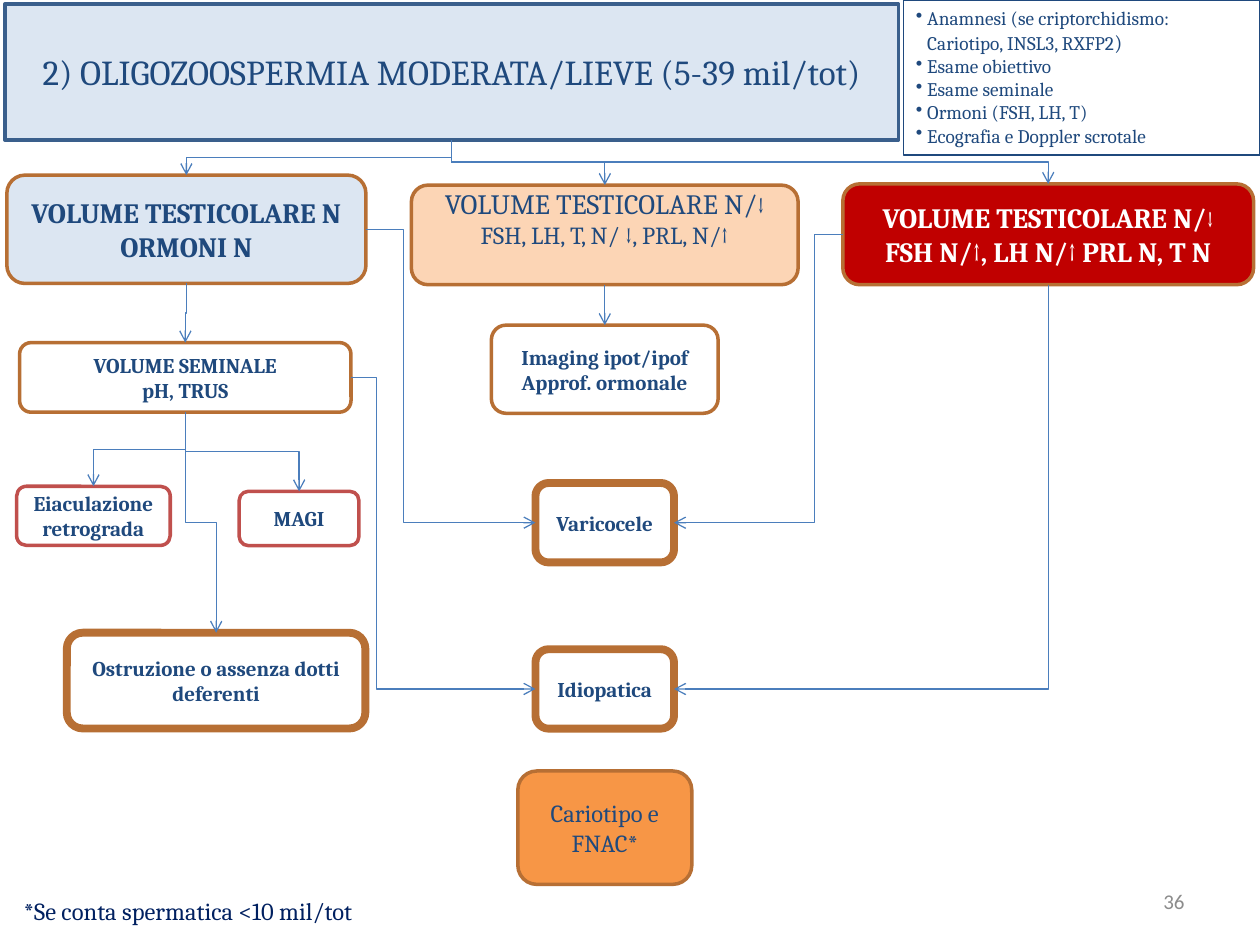
from lxml.etree import SubElement
from pptx import Presentation
from pptx.dml.color import RGBColor
from pptx.enum.shapes import MSO_CONNECTOR, MSO_SHAPE
from pptx.enum.text import MSO_ANCHOR, MSO_AUTO_SIZE, PP_ALIGN
from pptx.oxml.ns import qn
from pptx.util import Pt

NAVY = RGBColor(0x1F, 0x49, 0x7D)
NOTE_NAVY = RGBColor(0x00, 0x20, 0x60)
TITLE_EDGE = RGBColor(0x3A, 0x5F, 0x8C)
ARROW_BLUE = RGBColor(0x4B, 0x7E, 0xBC)
PALE_BLUE = RGBColor(0xDC, 0xE6, 0xF2)
PEACH = RGBColor(0xFC, 0xD5, 0xB5)
ORANGE = RGBColor(0xF7, 0x96, 0x46)
BROWN = RGBColor(0xB7, 0x6F, 0x34)
RED_EDGE = RGBColor(0xC0, 0x50, 0x4D)
DARK_RED = RGBColor(0xC0, 0x00, 0x00)
WHITE = RGBColor(0xFF, 0xFF, 0xFF)
GREY = RGBColor(0x8C, 0x8C, 0x8C)

MIDDLE_X, RIGHT_X = 345.6, 599
TOP, LEFT, BOTTOM, RIGHT = range(4)


def write(frame, paragraphs, size, color=NAVY, bold=False,
          align=PP_ALIGN.CENTER, font="Cambria", bullet=False):
    """Fill a frame; a paragraph is a string or a list of (text, size) runs."""
    frame.word_wrap = True
    frame.auto_size = MSO_AUTO_SIZE.NONE
    for index, content in enumerate(paragraphs):
        paragraph = frame.paragraphs[0] if index == 0 else frame.add_paragraph()
        runs = [(content, None)] if isinstance(content, str) else content
        for text, run_size in runs:
            run = paragraph.add_run()
            run.text = text
            if run_size:
                run.font.size = Pt(run_size)
        paragraph.alignment = align
        if bullet:
            properties = paragraph._p.get_or_add_pPr()
            properties.set("marL", str(Pt(6.5)))
            properties.set("indent", str(-Pt(6.5)))
            SubElement(properties, qn("a:buChar"), char="•")
        paragraph.font.name = font
        paragraph.font.size = Pt(size)
        paragraph.font.bold = bold
        paragraph.font.color.rgb = color


def paint(shape, fill, edge, weight):
    if fill is None:
        shape.fill.background()
    else:
        shape.fill.solid()
        shape.fill.fore_color.rgb = fill
    shape.line.color.rgb = edge
    shape.line.width = Pt(weight)


def add_title(slide, text):
    title = slide.shapes.title
    title.left, title.top = Pt(2.9), Pt(2.2)
    title.width, title.height = Pt(510.5), Pt(77.8)
    geometry = SubElement(title._element.spPr, qn("a:prstGeom"), prst="roundRect")
    SubElement(geometry, qn("a:avLst"))
    paint(title, PALE_BLUE, TITLE_EDGE, 2)
    write(title.text_frame, [text], 20)
    title.text_frame.vertical_anchor = MSO_ANCHOR.MIDDLE
    return title


def add_box(slide, center_x, top, width, height, paragraphs, size=12,
            fill=None, edge=BROWN, weight=2, color=NAVY, bold=True):
    box = slide.shapes.add_shape(MSO_SHAPE.ROUNDED_RECTANGLE, Pt(center_x - width / 2),
                                 Pt(top), Pt(width), Pt(height))
    box.shadow.inherit = False
    paint(box, fill, edge, weight)
    write(box.text_frame, paragraphs, size, color, bold)
    box.text_frame.vertical_anchor = MSO_ANCHOR.MIDDLE
    return box


def add_checklist(slide, items):
    panel = slide.shapes.add_shape(MSO_SHAPE.RECTANGLE, Pt(516.3), Pt(0), Pt(203.7), Pt(88.6))
    panel.shadow.inherit = False
    paint(panel, WHITE, NAVY, 0.75)
    write(panel.text_frame, items, 11, align=PP_ALIGN.LEFT, bullet=True)
    panel.text_frame.vertical_anchor = MSO_ANCHOR.TOP


def add_note(slide, left, top, width, height, text, size, **style):
    note = slide.shapes.add_textbox(Pt(left), Pt(top), Pt(width), Pt(height))
    write(note.text_frame, [text], size, **style)
    note.text_frame.vertical_anchor = MSO_ANCHOR.MIDDLE


def side_point(shape, side):
    middle_x, middle_y = shape.left + shape.width // 2, shape.top + shape.height // 2
    return {TOP: (middle_x, shape.top), LEFT: (shape.left, middle_y),
            BOTTOM: (middle_x, shape.top + shape.height),
            RIGHT: (shape.left + shape.width, middle_y)}[side]


def style_arrow(connector):
    connector.line.color.rgb = ARROW_BLUE
    connector.line.width = Pt(0.75)
    properties = connector._element.spPr
    SubElement(properties.find(qn("a:ln")), qn("a:tailEnd"), type="arrow")
    SubElement(properties, qn("a:effectLst"))


def add_straight_arrow(slide, source, target):
    connector = slide.shapes.add_connector(MSO_CONNECTOR.STRAIGHT, *side_point(source, BOTTOM),
                                           *side_point(target, TOP))
    connector.begin_connect(source, BOTTOM)
    connector.end_connect(target, TOP)
    style_arrow(connector)


def add_side_arrow(slide, source, source_side, target, target_side, bend):
    """Elbow that leaves sideways and turns at the given share of its width."""
    connector = slide.shapes.add_connector(MSO_CONNECTOR.ELBOW, *side_point(source, source_side),
                                           *side_point(target, target_side))
    guides = connector._element.spPr.find(qn("a:prstGeom")).find(qn("a:avLst"))
    SubElement(guides, qn("a:gd"), name="adj1", fmla=f"val {round(bend * 100000)}")
    style_arrow(connector)


def add_down_arrow(slide, source, target, target_side=TOP):
    """Elbow that leaves downwards: a sideways elbow turned by a quarter."""
    x1, y1 = side_point(source, BOTTOM)
    x2, y2 = side_point(target, target_side)
    width, height = y2 - y1, abs(x2 - x1)
    left, top = (x1 + x2 - width) // 2, (y1 + y2 - height) // 2
    begin_x, end_x = left, left + width
    to_right = x2 > x1
    if to_right:
        begin_x, end_x = end_x, begin_x
    connector = slide.shapes.add_connector(MSO_CONNECTOR.ELBOW, begin_x, top, end_x, top + height)
    properties = connector._element.spPr
    degrees = 270 if to_right else 90
    properties.find(qn("a:xfrm")).set("rot", str(degrees * 60000))
    if target_side != TOP:
        properties.find(qn("a:prstGeom")).set("prst", "bentConnector2")
    style_arrow(connector)


def main():
    presentation = Presentation()
    presentation.slide_width, presentation.slide_height = Pt(720), Pt(540)
    slide = presentation.slides.add_slide(presentation.slide_layouts[5])

    title = add_title(slide, "2) OLIGOZOOSPERMIA MODERATA/LIEVE (5-39 mil/tot)")
    add_checklist(slide, [
        [("Anamnesi (se criptorchidismo: Cariotipo, INSL3, RXFP2", 11), (")", 12)],
        "Esame obiettivo", "Esame seminale", "Ormoni (FSH, LH, T)",
        "Ecografia e Doppler scrotale"])

    normal = add_box(slide, 106.5, 100.1, 205.2, 61.9,
                     ["VOLUME TESTICOLARE N", "ORMONI N"], 16, PALE_BLUE)
    low_hormones = add_box(slide, MIDDLE_X, 105.8, 221, 56.9, [
        [("VOLUME TESTICOLARE N/", 16), ("↓", 14)],
        "FSH, LH, T, N/ ↓, PRL, N/↑"], 14, PEACH, bold=False)
    low_hormones.text_frame.margin_top = 0
    low_hormones.text_frame.margin_bottom = Pt(19)
    high_fsh = add_box(slide, RIGHT_X, 105.1, 234.7, 57.6, [
        [("VOLUME TESTICOLARE N/", 16), ("↓", 14)],
        "FSH N/↑, LH N/↑ PRL N, T N"], 16, DARK_RED, color=WHITE)

    seminal = add_box(slide, 105.9, 195.8, 189.4, 39.8, ["VOLUME SEMINALE", "pH, TRUS"])
    imaging = add_box(slide, MIDDLE_X, 185.8, 129.6, 50.4,
                      ["Imaging ipot/ipof", "Approf. ormonale"])
    retrograde = add_box(slide, 53.4, 277.9, 87.8, 33.8, ["Eiaculazione retrograda"],
                         fill=WHITE, edge=RED_EDGE)
    magi = add_box(slide, 170.9, 280.8, 68.4, 31, ["MAGI"], fill=WHITE, edge=RED_EDGE)
    obstruction = add_box(slide, 123.5, 361.6, 170.6, 54.7,
                          ["Ostruzione o assenza dotti deferenti"], weight=4.5)
    varicocele, idiopathic = [
        add_box(slide, MIDDLE_X, top, 79.2, 45.4, [text], weight=4.5)
        for text, top in (("Varicocele", 276), ("Idiopatica", 371))]
    add_box(slide, MIDDLE_X, 440.6, 99.4, 64.8, ["Cariotipo e FNAC*"], 14, ORANGE, bold=False)

    for source, targets in ((title, (normal, low_hormones, high_fsh)),
                            (normal, (seminal,)),
                            (seminal, (retrograde, magi, obstruction))):
        for target in targets:
            add_down_arrow(slide, source, target)
    add_down_arrow(slide, high_fsh, idiopathic, RIGHT)
    add_straight_arrow(slide, low_hormones, imaging)
    add_side_arrow(slide, seminal, RIGHT, idiopathic, LEFT, 0.14)
    add_side_arrow(slide, normal, RIGHT, varicocele, LEFT, 0.22)
    add_side_arrow(slide, high_fsh, LEFT, varicocele, RIGHT, 0.17)

    add_note(slide, 6.5, 508.3, 285.8, 24.5, "*Se conta spermatica <10 mil/tot", 14,
             color=NOTE_NAVY, align=PP_ALIGN.LEFT)
    add_note(slide, 516.2, 500.4, 167.8, 28.8, "36", 12,
             color=GREY, align=PP_ALIGN.RIGHT, font="Calibri")
    presentation.save("out.pptx")


if __name__ == "__main__":
    main()
